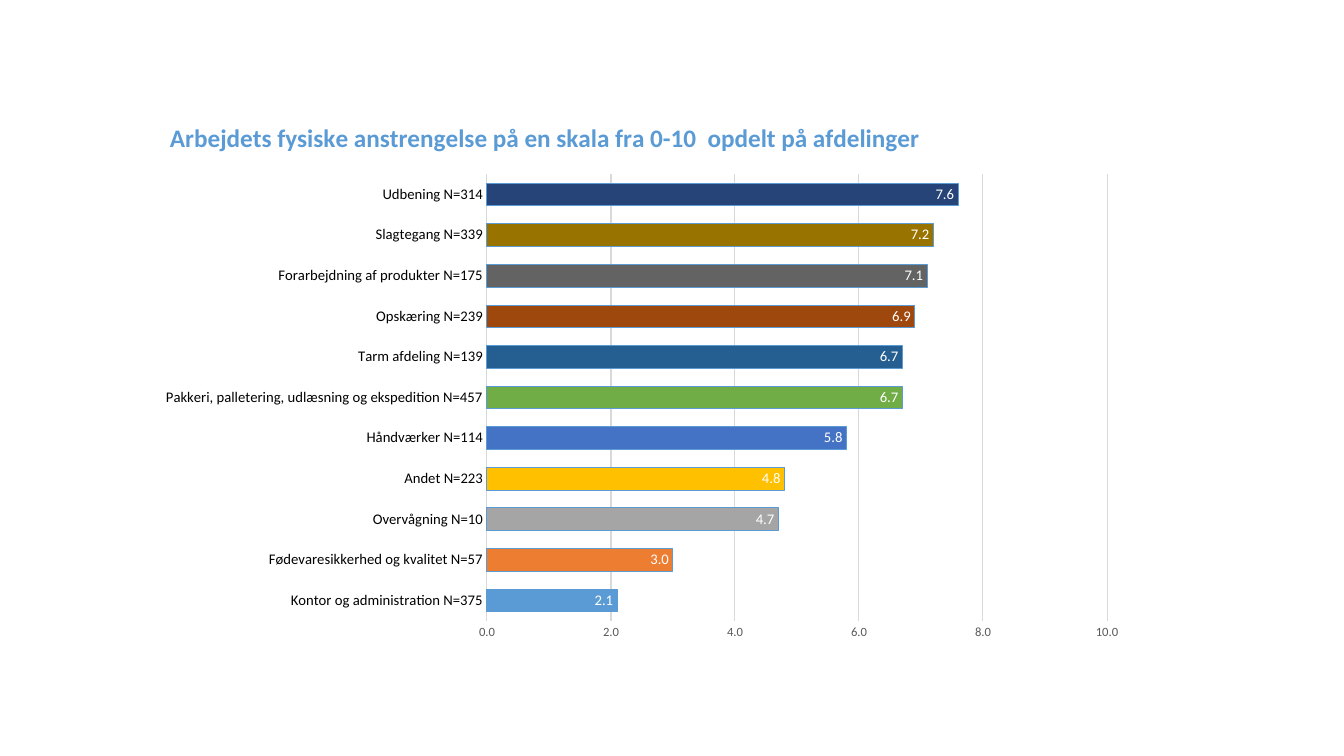
from lxml import etree
from pptx import Presentation
from pptx import util as u
from pptx.chart import data as chart_data
from pptx.dml.color import RGBColor
from pptx.enum import chart as ch
from pptx.oxml import ns

BLACK = RGBColor(0x00, 0x00, 0x00)
WHITE = RGBColor(0xFF, 0xFF, 0xFF)
GREY = RGBColor(0x59, 0x59, 0x59)
GRID = RGBColor(0xD9, 0xD9, 0xD9)
BLUE = RGBColor(0x5B, 0x9B, 0xD5)

TITLE = "Arbejdets fysiske anstrengelse på en skala fra 0-10  opdelt på afdelinger"

# Department, mean score, bar colour (bottom to top)
DEPARTMENTS = [
    ("Kontor og administration N=375", 2.1, BLUE),
    ("Fødevaresikkerhed og kvalitet N=57", 3.0, RGBColor(0xED, 0x7D, 0x31)),
    ("Overvågning N=10", 4.7, RGBColor(0xA5, 0xA5, 0xA5)),
    ("Andet N=223", 4.8, RGBColor(0xFF, 0xC0, 0x00)),
    ("Håndværker N=114", 5.8, RGBColor(0x44, 0x72, 0xC4)),
    ("Pakkeri, palletering, udlæsning og ekspedition N=457", 6.7, RGBColor(0x70, 0xAD, 0x47)),
    ("Tarm afdeling N=139", 6.7, RGBColor(0x25, 0x5E, 0x91)),
    ("Opskæring N=239", 6.9, RGBColor(0x9E, 0x48, 0x0E)),
    ("Forarbejdning af produkter N=175", 7.1, RGBColor(0x63, 0x63, 0x63)),
    ("Slagtegang N=339", 7.2, RGBColor(0x99, 0x73, 0x00)),
    ("Udbening N=314", 7.6, RGBColor(0x26, 0x44, 0x78)),
]

# Left, top, width, height in inches on the slide
CHART_BOX = (1.45, 1.06, 9.84, 5.4)
PLOT_BOX = (4.83, 1.73, 6.15, 4.43)
TITLE_AT = (1.64, 1.15)


class ChartSlide:
    font_name = "Calibri"

    def __init__(self, presentation):
        self.slide = presentation.slides.add_slide(presentation.slide_layouts[6])

    def style_font(self, font, size, color, bold=False):
        font.name = self.font_name
        font.size = u.Pt(size)
        font.bold = bold
        font.color.rgb = color

    def style_line(self, line, color):
        line.color.rgb = color
        line.width = u.Pt(0.75)

    def place(self, parent, index, settings):
        """Give a chart part a manual layout, as fractions of the chart."""
        for old in parent.findall(ns.qn("c:layout")):
            parent.remove(old)
        layout = etree.Element(ns.qn("c:layout"))
        manual = etree.SubElement(layout, ns.qn("c:manualLayout"))
        for name, value in settings:
            etree.SubElement(manual, ns.qn(f"c:{name}")).set("val", str(value))
        parent.insert(index, layout)

    def fractions(self, left, top):
        return [("xMode", "edge"), ("yMode", "edge"),
                ("x", (left - CHART_BOX[0]) / CHART_BOX[2]),
                ("y", (top - CHART_BOX[1]) / CHART_BOX[3])]

    def add_bar_chart(self, departments):
        source = chart_data.CategoryChartData(number_format="0.0")
        source.categories = [name for name, _, _ in departments]
        source.add_series("Series 1", [score for _, score, _ in departments])
        frame = self.slide.shapes.add_chart(
            ch.XL_CHART_TYPE.BAR_CLUSTERED, *map(u.Inches, CHART_BOX), source)
        chart = frame.chart
        chart.has_legend = False
        self.style_font(chart.font, 10, BLACK)
        left, top, width, height = PLOT_BOX
        self.place(chart.element.find(".//" + ns.qn("c:plotArea")), 0,
                   [("layoutTarget", "inner")] + self.fractions(left, top)
                   + [("w", width / CHART_BOX[2]), ("h", height / CHART_BOX[3])])
        return chart

    def add_title(self, chart, wording):
        chart.has_title = True
        paragraph = chart.chart_title.text_frame.paragraphs[0]
        paragraph.text = wording
        self.style_font(paragraph.font, 18, BLUE, bold=True)
        self.place(chart.chart_title.element, 1, self.fractions(*TITLE_AT))

    def style_axes(self, chart):
        names, scores = chart.category_axis, chart.value_axis
        for axis, size, color in ((names, 10.5, BLACK), (scores, 9, GREY)):
            axis.major_tick_mark = axis.minor_tick_mark = ch.XL_TICK_MARK.NONE
            self.style_font(axis.tick_labels.font, size, color)
        self.style_line(names.format.line, GRID)
        scores.format.line.fill.background()
        scores.minimum_scale, scores.maximum_scale, scores.major_unit = 0, 10, 2
        scores.has_major_gridlines = True
        self.style_line(scores.major_gridlines.format.line, GRID)
        scores.tick_labels.number_format = "0.0"
        scores.tick_labels.number_format_is_linked = False

    def style_bars(self, chart, colors):
        plot = chart.plots[0]
        plot.gap_width = 79
        plot.vary_by_categories = False
        series = plot.series[0]
        self.style_line(series.format.line, BLUE)
        for index, color in enumerate(colors):
            bar = series.points[index].format
            bar.fill.solid()
            bar.fill.fore_color.rgb = color
            self.style_line(bar.line, BLUE)
        labels = series.data_labels
        labels.show_value = True
        labels.position = ch.XL_LABEL_POSITION.INSIDE_END
        labels.number_format = "0.0"
        labels.number_format_is_linked = False
        self.style_font(labels.font, 10.5, WHITE)


def main():
    presentation = Presentation()
    presentation.slide_width = u.Inches(13.33)
    presentation.slide_height = u.Inches(7.5)

    # Bar chart of physical strain by department
    page = ChartSlide(presentation)
    chart = page.add_bar_chart(DEPARTMENTS)
    page.add_title(chart, TITLE)
    page.style_axes(chart)
    page.style_bars(chart, [color for _, _, color in DEPARTMENTS])

    presentation.save("out.pptx")


if __name__ == "__main__":
    main()
